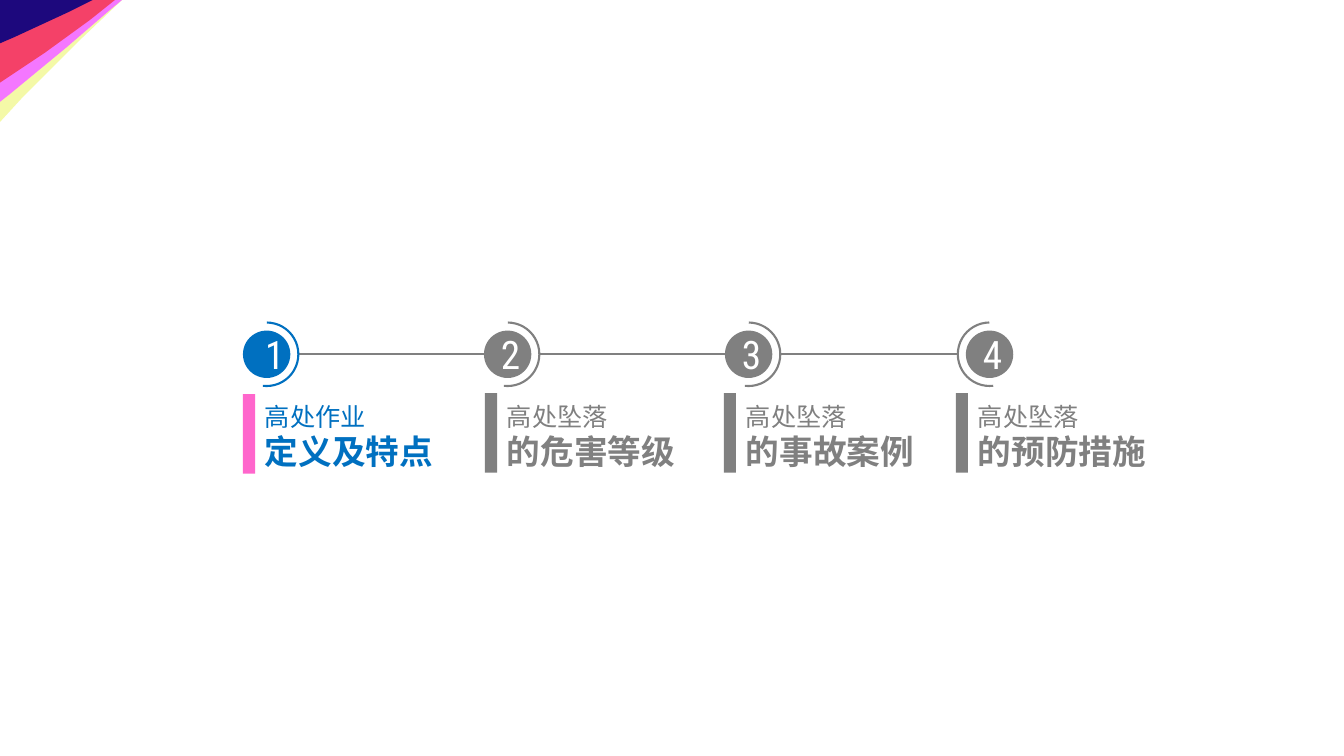
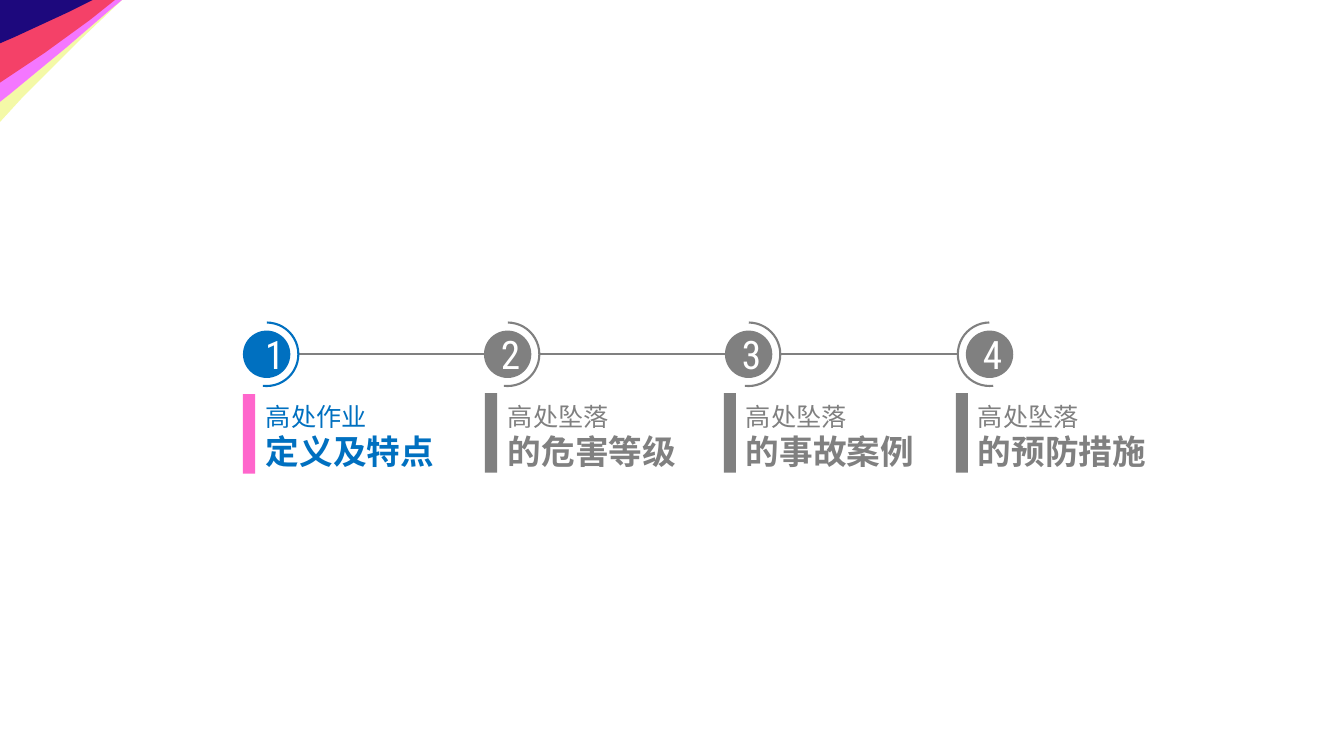
import dataclasses

import pptx
import pptx.dml.color
import pptx.enum.shapes
import pptx.enum.text
import pptx.oxml.ns
import pptx.shapes.autoshape
import pptx.slide
import pptx.util
from lxml import etree

Inches = pptx.util.Inches
Pt = pptx.util.Pt
RGBColor = pptx.dml.color.RGBColor
Shapes = pptx.enum.shapes.MSO_SHAPE

NAVY = RGBColor(0x1D, 0x08, 0x7D)
RED = RGBColor(0xF4, 0x41, 0x68)
MAGENTA = RGBColor(0xF4, 0x77, 0xFF)
YELLOW = RGBColor(0xF4, 0xF9, 0xA7)
BLUE = RGBColor(0x00, 0x70, 0xC0)
PINK = RGBColor(0xFF, 0x66, 0xCC)
GRAY = RGBColor(0x80, 0x80, 0x80)
WHITE = RGBColor(0xFF, 0xFF, 0xFF)

NUMBER_FONT = "Roboto Condensed"
LABEL_FONT = "Arial"
FIRST_LEFT = 2.41
STEP = 2.39
CIRCLE_TOP = 3.28
CIRCLE_SIZE = 0.47
ARC_GAP = 0.08
ARC_SIZE = CIRCLE_SIZE + 2 * ARC_GAP
BAR_WIDTH = 0.12
ARC_START, ARC_END = 270.49, 96.63
ADJUSTMENT_PER_DEGREE = 0.6


@dataclasses.dataclass(frozen=True)
class Ray:
    color: RGBColor
    edge: tuple[tuple[float, float], ...]


@dataclasses.dataclass(frozen=True)
class Stage:
    topic: str
    detail: str
    bar_left: float
    number_offset: float = 0.07
    number_width: float = 0.35
    bar_top: float = 3.9
    color: RGBColor = GRAY
    bar_color: RGBColor = GRAY
    mirrored: bool = False


RAYS = (
    Ray(YELLOW, ((1.21, 0), (0.81, 0.38), (0.22, 0.97), (0, 1.21))),
    Ray(MAGENTA, ((1.21, 0), (1.09, 0.1), (0.66, 0.47), (0.09, 0.94), (0, 1.01))),
    Ray(RED, ((1.14, 0), (0.89, 0.2), (0.45, 0.52), (0, 0.82))),
    Ray(NAVY, ((0.92, 0), (0.68, 0.12), (0.14, 0.37), (0, 0.43))),
)
STAGES = (
    Stage("高处作业", "定义及特点", 2.41, 0.12, 0.28, 3.91, BLUE, PINK),
    Stage("高处坠落", "的危害等级", 4.81),
    Stage("高处坠落", "的事故案例", 7.18),
    Stage("高处坠落", "的预防措施", 9.48, mirrored=True),
)
LABEL_SHIFTS = ((0, 0, 0, 0), (0.01, 0.01, 0, 0))


def add_corner(layout: pptx.slide.SlideLayout, slide: pptx.slide.Slide) -> None:
    for ray in RAYS:
        builder = slide.shapes.build_freeform(0, 0, scale=1.0)
        builder.add_line_segments([(Inches(x), Inches(y)) for x, y in ray.edge])
        shape = builder.convert_to_shape()
        shape.shadow.inherit = False
        shape.fill.solid()
        shape.fill.fore_color.rgb = ray.color
        shape.line.fill.background()
        layout.shapes.element.append(shape.element)


def add_solid(slide: pptx.slide.Slide, kind: Shapes, left: float, top: float,
              width: float, height: float, color: RGBColor) -> None:
    shape = slide.shapes.add_shape(
        kind, Inches(left), Inches(top), Inches(width), Inches(height))
    shape.shadow.inherit = False
    shape.fill.solid()
    shape.fill.fore_color.rgb = color
    shape.line.fill.background()


def add_arc(slide: pptx.slide.Slide, left: float, stage: Stage) -> None:
    arc = slide.shapes.add_shape(
        Shapes.ARC, Inches(left), Inches(CIRCLE_TOP - ARC_GAP),
        Inches(ARC_SIZE), Inches(ARC_SIZE))
    angles = (ARC_START, ARC_END)
    if stage.mirrored:
        angles = tuple((540 - angle) % 360 for angle in reversed(angles))
    for index, angle in enumerate(angles):
        arc.adjustments[index] = angle * ADJUSTMENT_PER_DEGREE
    arc.shadow.inherit = False
    arc.fill.background()
    arc.line.color.rgb = stage.color
    arc.line.width = Pt(1.5)


def add_line(slide: pptx.slide.Slide, start: float, end: float) -> None:
    middle = Inches(CIRCLE_TOP + CIRCLE_SIZE / 2)
    connector = slide.shapes.add_connector(
        pptx.enum.shapes.MSO_CONNECTOR.STRAIGHT,
        Inches(start), middle, Inches(end), middle)
    connector.line.color.rgb = GRAY
    connector.line.width = Pt(1.5)
    properties = connector.element.find(pptx.oxml.ns.qn("p:spPr"))
    etree.SubElement(properties, pptx.oxml.ns.qn("a:effectLst"))


def add_text(slide: pptx.slide.Slide, left: float, top: float, width: float,
             height: float, text: str, sizes: tuple[int, ...], font: str,
             color: RGBColor) -> None:
    box = slide.shapes.add_textbox(
        Inches(left), Inches(top), Inches(width), Inches(height))
    frame = box.text_frame
    frame.text = text
    frame.word_wrap = False
    frame.auto_size = pptx.enum.text.MSO_AUTO_SIZE.SHAPE_TO_FIT_TEXT
    for index, (paragraph, size) in enumerate(zip(frame.paragraphs, sizes)):
        for run in paragraph.runs:
            run.font.name = font
            run.font.size = Pt(size)
            run.font.bold = index > 0
            run.font.color.rgb = color


def add_stage(slide: pptx.slide.Slide, index: int, stage: Stage,
              label_shift: float) -> None:
    left = FIRST_LEFT + index * STEP
    add_solid(slide, Shapes.OVAL, left, CIRCLE_TOP, CIRCLE_SIZE, CIRCLE_SIZE,
              stage.color)
    add_arc(slide, left - ARC_GAP, stage)
    add_text(slide, left + stage.number_offset, 3.23, stage.number_width, 0.57,
             str(index + 1), (28,), NUMBER_FONT, WHITE)
    add_solid(slide, Shapes.RECTANGLE, stage.bar_left, stage.bar_top,
              BAR_WIDTH, 0.79, stage.bar_color)
    add_text(slide, stage.bar_left + BAR_WIDTH + label_shift, 3.93, 1.87, 0.81,
             f"{stage.topic}\n{stage.detail}", (18, 24), LABEL_FONT, stage.color)


def add_timeline(slide: pptx.slide.Slide, label_shifts: tuple[float, ...]) -> None:
    for index, stage in enumerate(STAGES[1:], start=1):
        end = FIRST_LEFT + index * STEP
        start = end - STEP + CIRCLE_SIZE + ARC_GAP
        add_line(slide, start, end - ARC_GAP if stage.mirrored else end)
    for index, (stage, shift) in enumerate(zip(STAGES, label_shifts)):
        add_stage(slide, index, stage, shift)


def main() -> None:
    presentation = pptx.Presentation()
    presentation.slide_width = Inches(13.33)
    presentation.slide_height = Inches(7.5)
    layout = presentation.slide_layouts[6]
    slides = [presentation.slides.add_slide(layout) for _ in LABEL_SHIFTS]
    add_corner(layout, slides[0])
    for slide, label_shifts in zip(slides, LABEL_SHIFTS):
        add_timeline(slide, label_shifts)
    presentation.save("out.pptx")


if __name__ == "__main__":
    main()
